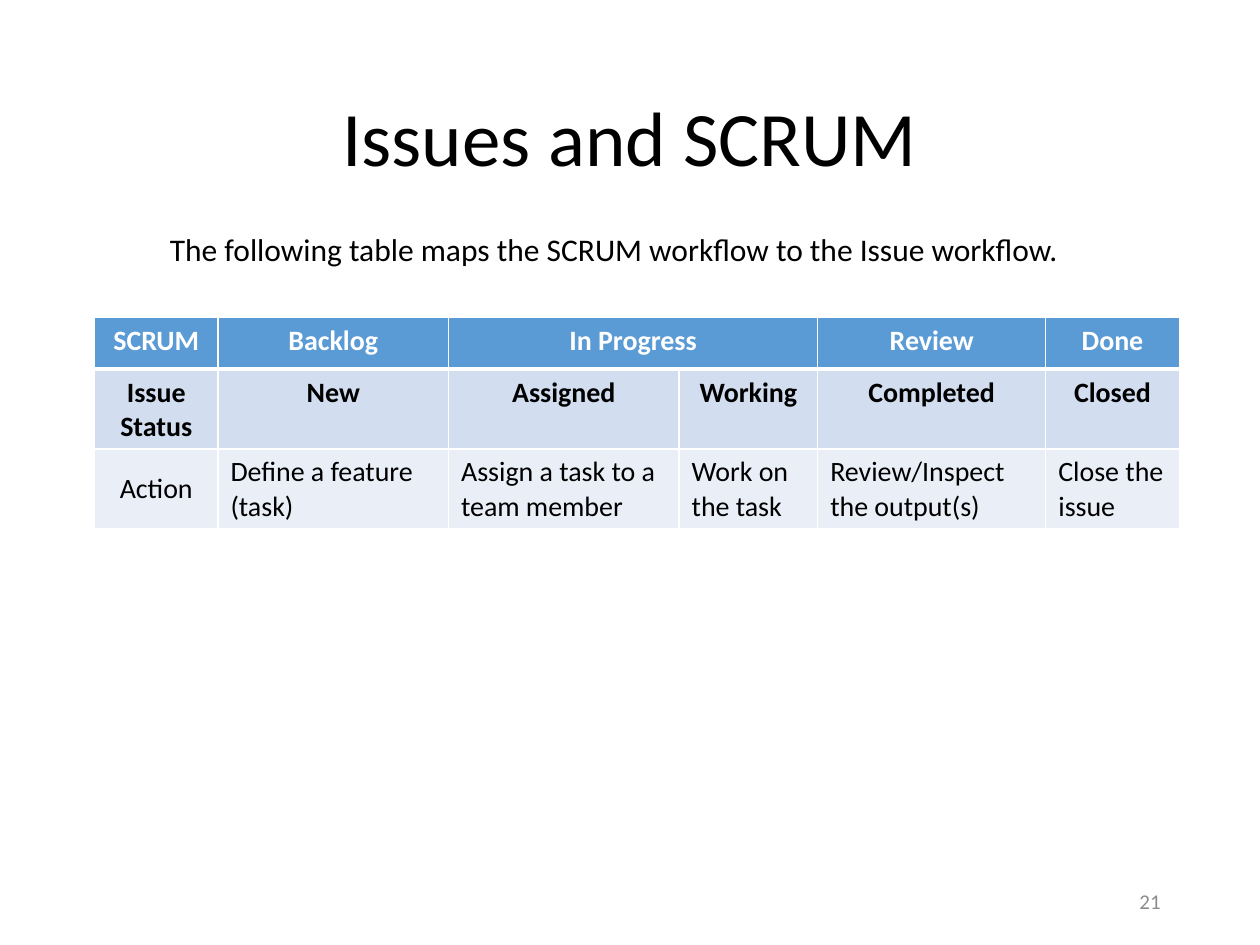
from dataclasses import dataclass

from lxml import etree
from pptx import Presentation
from pptx.dml.color import RGBColor
from pptx.enum.text import MSO_ANCHOR, PP_ALIGN
from pptx.oxml.ns import qn
from pptx.util import Inches, Pt

LEFT, CENTER, RIGHT = PP_ALIGN.LEFT, PP_ALIGN.CENTER, PP_ALIGN.RIGHT
TOP, MIDDLE = MSO_ANCHOR.TOP, MSO_ANCHOR.MIDDLE
TITLE_ONLY = 5


@dataclass(frozen=True)
class Theme:
    font: str = "Calibri"
    ink: str = "000000"
    white: str = "FFFFFF"
    muted: str = "8C8C8C"
    header: str = "5B9BD5"
    band_dark: str = "D2DEEF"
    band_light: str = "EAEFF7"
    title_size: int = 44
    body_size: int = 18
    table_size: int = 16
    number_size: int = 12
    thin: int = 1
    thick: int = 3


THEME = Theme()
COLUMN_WIDTHS = [0.98, 1.83, 1.83, 1.1, 1.81, 1.06]
ROW_HEIGHTS = [0.41, 0.63, 0.63]
WORKFLOW = [
    ["SCRUM", "Backlog", "In Progress", "", "Review", "Done"],
    ["Issue Status", "New", "Assigned", "Working", "Completed", "Closed"],
    ["Action", "Define a feature \v(task)", "Assign a task to a team member",
     "Work on the task", "Review/Inspect the output(s)", "Close the issue"],
]
ROW_STYLES = [
    {"fill": THEME.header, "color": THEME.white, "bold": True},
    {"fill": THEME.band_dark, "color": THEME.ink, "bold": True},
    {"fill": THEME.band_light, "color": THEME.ink, "bold": False},
]


def write(frame, text, size, color, align=LEFT, bold=False):
    """Put one formatted paragraph in a text frame."""
    frame.text = text
    para = frame.paragraphs[0]
    para.alignment = align
    for span in para.runs:
        values = {"name": THEME.font, "size": Pt(size), "bold": bold}
        for name, value in values.items():
            setattr(span.font, name, value)
        span.font.color.rgb = RGBColor.from_string(color)
    return para


def place(shape, box):
    for name, value in zip(("left", "top", "width", "height"), box):
        setattr(shape, name, Inches(value))


def add_title(page, box, text):
    title = page.shapes.title
    place(title, box)
    title.text_frame.vertical_anchor = MIDDLE
    para = write(title.text_frame, text, THEME.title_size, THEME.ink, CENTER)
    para.line_spacing = 0.9


def add_text(page, box, text, size, color, align=LEFT, anchor=TOP, wrap=True):
    frame = page.shapes.add_textbox(*map(Inches, box)).text_frame
    frame.word_wrap = wrap
    frame.vertical_anchor = anchor
    write(frame, text, size, color, align)


def set_borders(cell, row):
    """Draw white cell lines, heavier between the header and the body."""
    properties = cell._tc.get_or_add_tcPr()
    heavy = {0: "lnB", 1: "lnT"}.get(row)
    for side in ("lnL", "lnR", "lnT", "lnB"):
        weight = THEME.thick if side == heavy else THEME.thin
        line = etree.SubElement(properties, qn(f"a:{side}"), w=str(Pt(weight)))
        fill = etree.SubElement(line, qn("a:solidFill"))
        etree.SubElement(fill, qn("a:srgbClr"), val=THEME.white)


def add_workflow_table(page, box):
    table = page.shapes.add_table(
        len(WORKFLOW), len(COLUMN_WIDTHS), *map(Inches, box)).table
    for column, width in zip(table.columns, COLUMN_WIDTHS):
        column.width = Inches(width)
    for row, height in zip(table.rows, ROW_HEIGHTS):
        row.height = Inches(height)
    # "In Progress" covers both Assigned and Working
    table.cell(0, 2).merge(table.cell(0, 3))

    for r, (texts, style) in enumerate(zip(WORKFLOW, ROW_STYLES)):
        for c, text in enumerate(texts):
            cell = table.cell(r, c)
            set_borders(cell, r)
            cell.fill.solid()
            cell.fill.fore_color.rgb = RGBColor.from_string(style["fill"])
            is_action = r == 2
            cell.vertical_anchor = MIDDLE if is_action and c == 0 else TOP
            align = LEFT if is_action and c > 0 else CENTER
            write(cell.text_frame, text, THEME.table_size, style["color"],
                  align, style["bold"])


def main():
    deck = Presentation()
    deck.slide_width, deck.slide_height = Inches(10), Inches(7.5)
    page = deck.slides.add_slide(deck.slide_layouts[TITLE_ONLY])

    # Heading and introduction
    add_title(page, (0.69, 0.4, 8.62, 1.45), "Issues and SCRUM")
    add_text(page, (1.25, 1.78, 7.34, 0.4),
             "The following table maps the SCRUM workflow to the Issue workflow.",
             THEME.body_size, THEME.ink, wrap=False)

    # Workflow mapping
    add_workflow_table(
        page, (0.75, 2.52, sum(COLUMN_WIDTHS), sum(ROW_HEIGHTS)))

    # Page number
    add_text(page, (7.06, 6.95, 2.25, 0.4), "21",
             THEME.number_size, THEME.muted, RIGHT, MIDDLE)
    deck.save("out.pptx")


if __name__ == "__main__":
    main()
